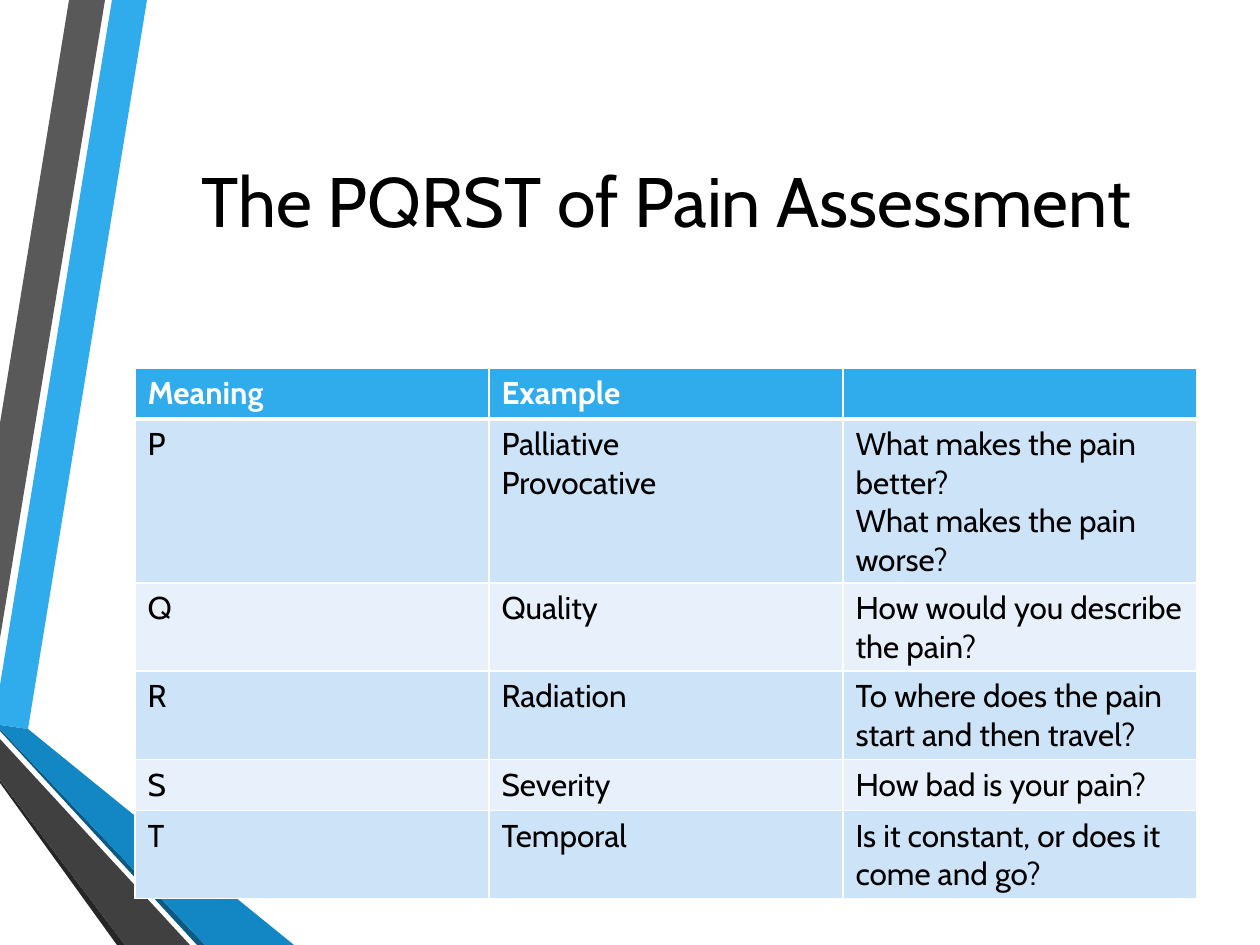
from lxml import etree
from pptx import Presentation
from pptx.dml.color import RGBColor
from pptx.enum.text import MSO_ANCHOR, PP_ALIGN
from pptx.oxml.ns import qn
from pptx.util import Pt

MIDDLE = MSO_ANCHOR.MIDDLE
CENTER = PP_ALIGN.CENTER

EMU_PER_PX = 914400 / 126
WIDTH, HEIGHT = 1260, 945

BLACK = RGBColor(0x00, 0x00, 0x00)
WHITE = RGBColor(0xFF, 0xFF, 0xFF)
BLUE = RGBColor(0x30, 0xAC, 0xEC)
MID_BLUE = RGBColor(0x12, 0x87, 0xC3)
DEEP_BLUE = RGBColor(0x0C, 0x5A, 0x82)
GREY = RGBColor(0x59, 0x59, 0x59)
DARK_GREY = RGBColor(0x40, 0x40, 0x40)
CHARCOAL = RGBColor(0x26, 0x26, 0x26)
BAND_DARK = RGBColor(0xCD, 0xE3, 0xF8)
BAND_LIGHT = RGBColor(0xE8, 0xF1, 0xFB)

RIBBONS = [
    (BLUE, [(0, 685), (0, 725), (28, 729), (147, 0), (112, 0)]),
    (GREY, [(105, 0), (69, 0), (0, 423), (0, 638)]),
    (CHARCOAL, [(0, 780), (0, 783), (117, HEIGHT), (125, HEIGHT)]),
    (DEEP_BLUE, [(0, 729), (0, 731), (197, HEIGHT), (205, HEIGHT)]),
    (MID_BLUE, [(0, 729), (205, HEIGHT), (294, HEIGHT), (28, 729), (0, 725)]),
    (DARK_GREY, [(0, 780), (125, HEIGHT), (190, HEIGHT), (0, 739)]),
]

PAIN_ROWS = [
    ("Meaning", "Example", ""),
    ("P", "Palliative\nProvocative",
     "What makes the pain better?\nWhat makes the pain worse?"),
    ("Q", "Quality", "How would you describe the pain?"),
    ("R", "Radiation", "To where does the pain start and then travel?"),
    ("S", "Severity", "How bad is your pain?"),
    ("T", "Temporal", "Is it constant, or does it come and go?"),
]


def px(n):
    return round(n * EMU_PER_PX)


class SlideBuilder:
    font = "Cabin"
    title_size = 40
    body_size = 18

    def __init__(self, slide):
        self.slide = slide

    def style(self, tf, size, color, bold=False):
        for p in tf.paragraphs:
            for r in p.runs:
                r.font.name = self.font
                r.font.size = Pt(size)
                r.font.bold = bold
                r.font.color.rgb = color

    def ribbon(self, color, points):
        builder = self.slide.shapes.build_freeform(*points[0], scale=EMU_PER_PX)
        builder.add_line_segments(points[1:], close=True)
        s = builder.convert_to_shape()
        s.shadow.inherit = False
        s.fill.solid()
        s.fill.fore_color.rgb = color
        s.line.fill.background()

    def title(self, text, x, y, w, h):
        tf = self.slide.shapes.add_textbox(px(x), px(y), px(w), px(h)).text_frame
        tf.word_wrap = True
        tf.vertical_anchor = MIDDLE
        tf.text = text
        tf.paragraphs[0].alignment = CENTER
        self.style(tf, self.title_size, BLACK)

    def borders(self, cell, top, bottom):
        tc_pr = cell._tc.get_or_add_tcPr()
        widths = {"a:lnL": 1, "a:lnR": 1, "a:lnT": top, "a:lnB": bottom}
        for i, (tag, width) in enumerate(widths.items()):
            ln = etree.Element(qn(tag), w=str(Pt(width)))
            fill = etree.SubElement(ln, qn("a:solidFill"))
            etree.SubElement(fill, qn("a:srgbClr"), val=str(WHITE))
            tc_pr.insert(i, ln)

    def table(self, rows, x, y, col_w, row_h):
        cols = len(rows[0])
        frame = self.slide.shapes.add_table(
            len(rows), cols, px(x), px(y), px(col_w * cols), px(row_h * len(rows)))
        table = frame.table
        for col in table.columns:
            col.width = px(col_w)
        for i, texts in enumerate(rows):
            header = i == 0
            band = BAND_DARK if i % 2 else BAND_LIGHT
            table.rows[i].height = px(row_h)
            for j, text in enumerate(texts):
                cell = table.cell(i, j)
                cell.text_frame.text = text
                self.style(cell.text_frame, self.body_size,
                           WHITE if header else BLACK, header)
                cell.fill.solid()
                cell.fill.fore_color.rgb = BLUE if header else band
                self.borders(cell, 3 if i == 1 else 1, 3 if header else 1)


def main():
    prs = Presentation()
    prs.slide_width, prs.slide_height = px(WIDTH), px(HEIGHT)
    sb = SlideBuilder(prs.slides.add_slide(prs.slide_layouts[6]))
    for color, points in RIBBONS:
        sb.ribbon(color, points)
    sb.title("The PQRST of Pain Assessment", 135, 63, 1062, 273)
    sb.table(PAIN_ROWS, 135, 368, 354, 51)
    prs.save("out.pptx")


if __name__ == "__main__":
    main()
